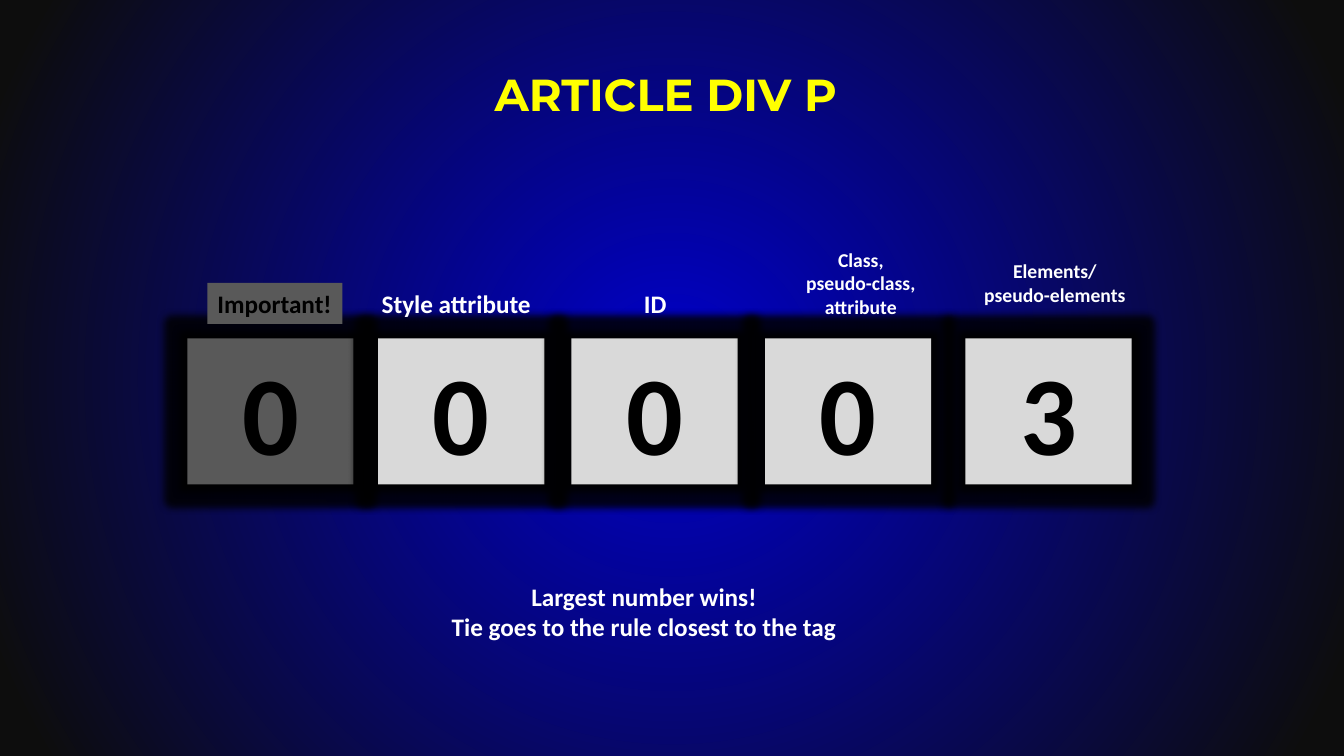
from dataclasses import dataclass

from lxml import etree
from pptx import Presentation
from pptx.dml.color import RGBColor
from pptx.enum.shapes import MSO_SHAPE
from pptx.enum.text import MSO_ANCHOR, MSO_AUTO_SIZE, PP_ALIGN
from pptx.oxml.ns import qn
from pptx.util import Cm, Pt

RECTANGLE = MSO_SHAPE.RECTANGLE
TOP, MIDDLE = MSO_ANCHOR.TOP, MSO_ANCHOR.MIDDLE
LEFT, CENTER = PP_ALIGN.LEFT, PP_ALIGN.CENTER
FIT_SHAPE, FIXED = MSO_AUTO_SIZE.SHAPE_TO_FIT_TEXT, MSO_AUTO_SIZE.NONE


@dataclass(frozen=True)
class Theme:
    body_font: str = "Calibri"
    title_font: str = "Montserrat"
    center: str = "0000CC"
    edge: str = "0D0D0D"
    muted: str = "595959"
    light: str = "D9D9D9"
    black: str = "000000"
    white: str = "FFFFFF"
    yellow: str = "FFFF00"
    digit_size: int = 80
    title_size: int = 32
    label_size: int = 18
    small_size: int = 14


class SlideBuilder:
    def __init__(self, slide, theme):
        self.slide = slide
        self.theme = theme

    def radial_background(self):
        fill = self.slide.background.fill
        fill.gradient()
        colors = (self.theme.center, self.theme.edge)
        for stop, color, position in zip(fill.gradient_stops, colors, (0, 0.95)):
            stop.color.rgb = RGBColor.from_string(color)
            stop.position = position
        gradient = next(self.slide.element.iter(qn("a:gradFill")))
        linear = gradient.find(qn("a:lin"))
        circle = etree.Element(qn("a:path"), path="circle")
        sides = dict.fromkeys("ltrb", "50000")
        etree.SubElement(circle, qn("a:fillToRect"), **sides)
        gradient.replace(linear, circle)

    def add_lines(self, shape, lines, size, color, align=CENTER, font=None,
                  anchor=TOP, wrap=True, auto_size=FIT_SHAPE):
        frame = shape.text_frame
        frame.word_wrap = wrap
        frame.auto_size = auto_size
        frame.vertical_anchor = anchor
        for index, line in enumerate(lines):
            paragraph = frame.add_paragraph() if index else frame.paragraphs[0]
            paragraph.alignment = align
            run = paragraph.add_run()
            run.text = line
            run.font.name = font or self.theme.body_font
            run.font.size = Pt(size)
            run.font.bold = True
            run.font.color.rgb = RGBColor.from_string(color)

    def text(self, box, lines, size, color, **options):
        shape = self.slide.shapes.add_textbox(*map(Cm, box))
        self.add_lines(shape, lines, size, color, **options)

    def panel(self, box, fill, lines, size, **options):
        shape = self.slide.shapes.add_shape(RECTANGLE, *map(Cm, box))
        shape.shadow.inherit = False
        shape.fill.solid()
        shape.fill.fore_color.rgb = RGBColor.from_string(fill)
        shape.line.fill.background()
        self.add_lines(shape, lines, size, self.theme.black, **options)
        return shape

    def digit(self, left, value, fill):
        shape = self.panel((left, 8.53, 4.19, 3.68), fill, [value], self.theme.digit_size)
        effects = shape.element.spPr.find(qn("a:effectLst"))
        glow = etree.SubElement(effects, qn("a:glow"), rad=str(Pt(11)))
        color = etree.SubElement(glow, qn("a:srgbClr"), val=self.theme.black)
        etree.SubElement(color, qn("a:alpha"), val="85000")


def main():
    presentation = Presentation()
    presentation.slide_width = Cm(33.87)
    presentation.slide_height = Cm(19.05)
    theme = Theme()
    builder = SlideBuilder(
        presentation.slides.add_slide(presentation.slide_layouts[6]), theme)
    builder.radial_background()

    fills = [theme.muted] + [theme.light] * 4
    for left, value, fill in zip((4.72, 9.53, 14.4, 19.28, 24.33), "00003", fills):
        builder.digit(left, value, fill)

    builder.panel((5.23, 7.13, 3.4, 1.03), theme.muted, ["Important!"],
                  theme.label_size, align=LEFT, wrap=False)
    for box, label in (((9.37, 7.13, 4.32, 1.03), "Style attribute"),
                       ((15.98, 7.13, 1.09, 1.03), "ID")):
        builder.text(box, [label], theme.label_size, theme.white, align=LEFT, wrap=False)
    builder.text((20.02, 6.12, 3.35, 2.06), ["Class, pseudo-class, attribute"],
                 theme.small_size, theme.white)
    builder.text((24.54, 6.4, 4.09, 1.45), ["Elements/", "pseudo-elements"],
                 theme.small_size, theme.white, wrap=False)
    builder.text((11.1, 14.53, 10.26, 1.8),
                 ["Largest number wins!", "Tie goes to the rule closest to the tag"],
                 theme.label_size, theme.white, wrap=False)
    builder.text((1.7, 0.76, 30.48, 3.18), ["ARTICLE DIV P "], theme.title_size,
                 theme.yellow, font=theme.title_font, anchor=MIDDLE, auto_size=FIXED)

    presentation.save("out.pptx")


if __name__ == "__main__":
    main()
